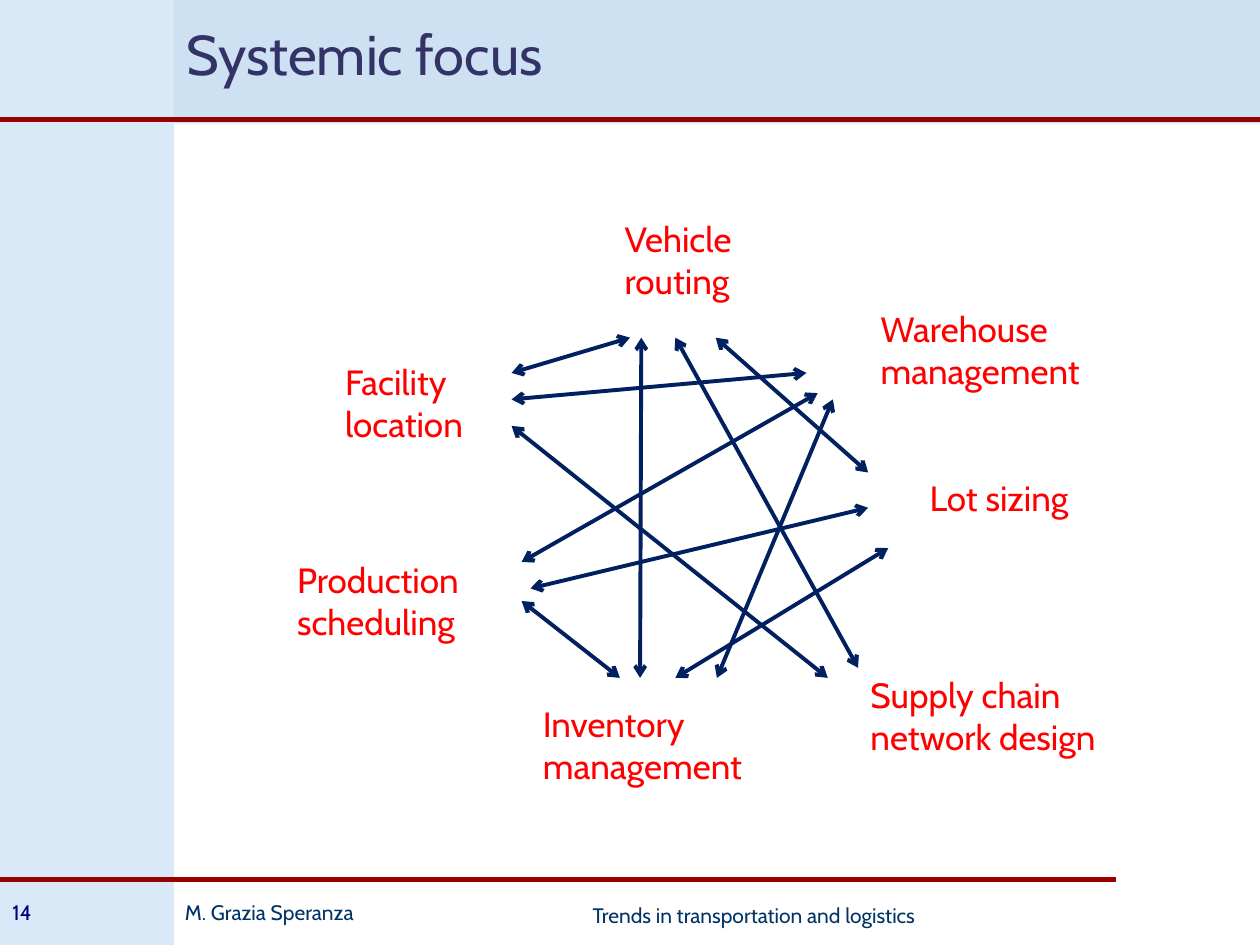
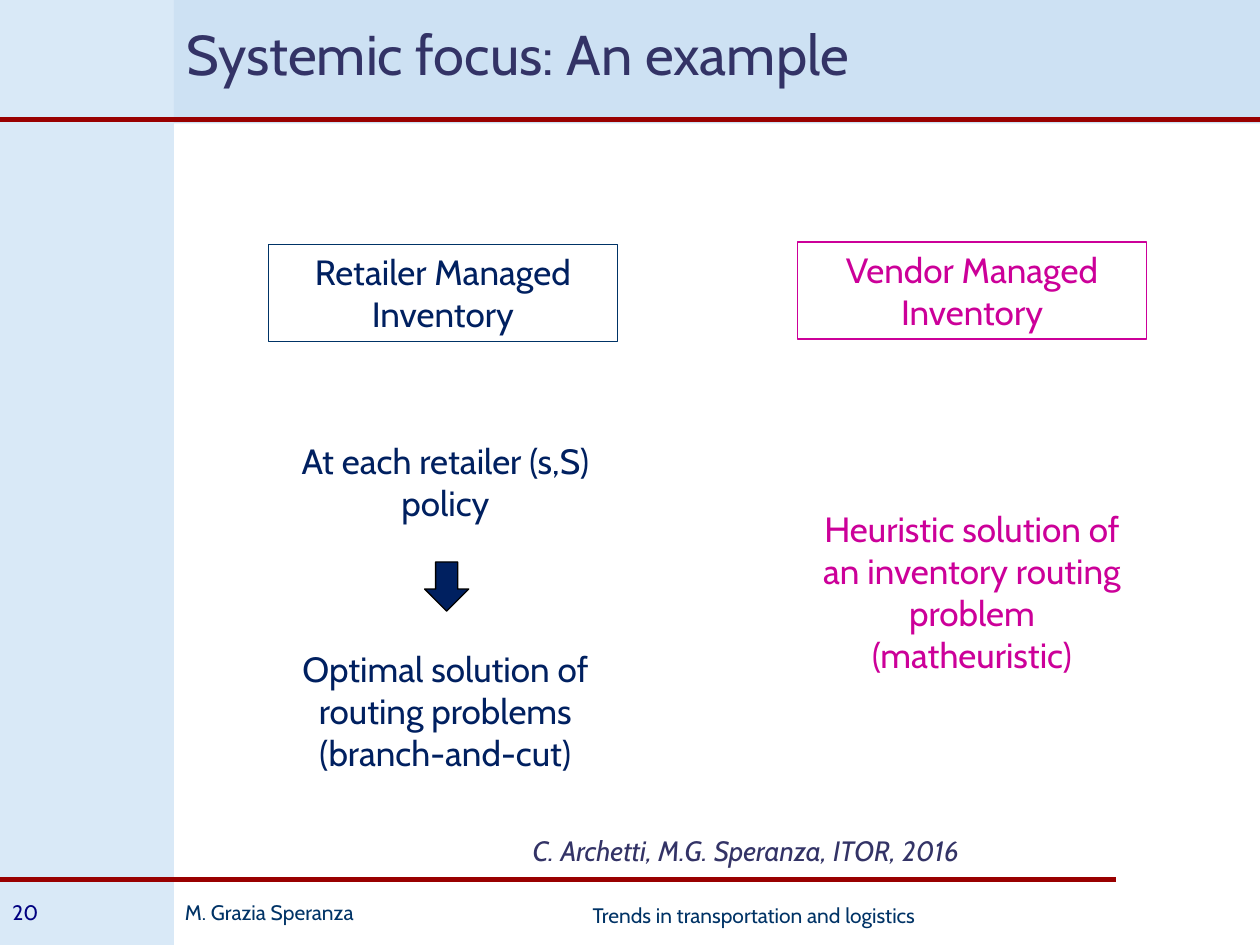
from lxml import etree
from pptx import Presentation
from pptx.dml.color import RGBColor
from pptx.enum.shapes import MSO_CONNECTOR, MSO_SHAPE
from pptx.enum.text import MSO_ANCHOR, MSO_AUTO_SIZE, PP_ALIGN
from pptx.oxml.ns import qn
from pptx.util import Inches, Pt

STRAIGHT = MSO_CONNECTOR.STRAIGHT
RECTANGLE = MSO_SHAPE.RECTANGLE
ROUNDED = MSO_SHAPE.ROUNDED_RECTANGLE
DOWN_ARROW = MSO_SHAPE.DOWN_ARROW
LEFT, CENTER = PP_ALIGN.LEFT, PP_ALIGN.CENTER
TOP, MIDDLE = MSO_ANCHOR.TOP, MSO_ANCHOR.MIDDLE
NO_AUTOFIT = MSO_AUTO_SIZE.NONE

FONT = "Cabin"
TITLE_ONLY = 5
COLORS = {
    "side": "D9E9F7",
    "header": "CDE1F3",
    "rule": "990000",
    "footer": "003366",
    "number": "000080",
    "title": "333366",
    "topic": "FF0000",
    "navy": "002060",
    "magenta": "CC0099",
    "black": "000000",
}

TOPICS = [
    ("Facility location", 2.64, 2.81, 1.64),
    ("Warehouse management", 6.89, 2.39, 2.13),
    ("Production scheduling", 2.26, 4.38, 1.64),
    ("Supply chain network design", 6.81, 5.3, 2.28),
    ("Vehicle routing", 4.86, 1.68, 1.64),
    ("Inventory management", 4.21, 5.53, 2.3),
    ("Lot sizing", 7.28, 3.73, 2.13),
]
LINKS = [
    ((5.09, 2.68), (5.08, 5.38)),
    ((6.4, 2.96), (4.06, 3.17)),
    ((5.68, 2.68), (6.89, 3.75)),
    ((6.89, 4.03), (4.21, 4.67)),
    ((4.14, 4.77), (4.92, 5.38)),
    ((6.57, 5.38), (4.06, 3.38)),
    ((6.61, 3.17), (5.69, 5.38)),
    ((6.49, 3.12), (4.14, 4.46)),
    ((5.36, 5.38), (7.05, 4.35)),
    ((5.36, 2.68), (6.81, 5.3)),
    ((5, 2.68), (4.06, 2.96)),
]


def color(name):
    return RGBColor.from_string(COLORS[name])


class Painter:
    def __init__(self, deck):
        self.deck = deck
        self.page = None

    def start_page(self, title, number):
        layout = self.deck.slide_layouts[TITLE_ONLY]
        self.page = self.deck.slides.add_slide(layout)
        self.shape(ROUNDED, (0, 0, 1.38, 7.5), fill="side").adjustments[0] = 0
        self.shape(RECTANGLE, (1.38, 0, 8.62, 0.98), fill="header")
        self.line((0, 6.98), (8.86, 6.98), "rule", 3)
        self.line((0, 0.95), (10, 0.95), "rule", 3)
        self.text("M. Grazia Speranza", (1.37, 7.09, 1.64, 0.31), 12,
                  "footer", wrap=False)
        self.text("Trends in transportation and logistics",
                  (3.27, 7.11, 5.43, 0.39), 12, "footer", CENTER)
        self.text(number, (0, 7.09, 1.18, 0.32), 12, "number")
        self.title(title)

    def title(self, words):
        box = self.page.shapes.title
        box.left, box.top = Inches(1.38), Inches(-0.14)
        box.width, box.height = Inches(8.62), Inches(1.12)
        self.fill_text(box, words, 32, "title", anchor=MIDDLE)
        box.element.getparent().append(box.element)

    def fill_text(self, box, words, size, ink, align=LEFT, anchor=TOP,
                  wrap=True, italic=False):
        frame = box.text_frame
        frame.text = words
        frame.word_wrap = wrap
        frame.auto_size = NO_AUTOFIT
        frame.vertical_anchor = anchor
        for para in frame.paragraphs:
            para.alignment = align
            for span in para.runs:
                span.font.name = FONT
                span.font.size = Pt(size)
                span.font.italic = italic
                span.font.color.rgb = color(ink)

    def text(self, words, area, size, ink, align=LEFT, **style):
        box = self.page.shapes.add_textbox(*map(Inches, area))
        self.fill_text(box, words, size, ink, align, **style)

    def shape(self, kind, area, fill=None, outline=None):
        shape = self.page.shapes.add_shape(kind, *map(Inches, area))
        shape.shadow.inherit = False
        if fill:
            shape.fill.solid()
            shape.fill.fore_color.rgb = color(fill)
        else:
            shape.fill.background()
        if outline:
            shape.line.color.rgb = color(outline)
            shape.line.width = Pt(0.75)
        else:
            shape.line.fill.background()
        return shape

    def framed_text(self, words, area, ink, outline):
        box = self.shape(RECTANGLE, area, outline=outline)
        self.fill_text(box, words, 20, ink, CENTER)

    def line(self, start, end, ink, width, arrows=False):
        line = self.page.shapes.add_connector(
            STRAIGHT, *map(Inches, start + end))
        line.line.color.rgb = color(ink)
        line.line.width = Pt(width)
        properties = line.element.spPr
        if arrows:
            outline = properties.find(qn("a:ln"))
            for tag in ("a:headEnd", "a:tailEnd"):
                etree.SubElement(outline, qn(tag), type="arrow")
        etree.SubElement(properties, qn("a:effectLst"))


def draw_focus(painter):
    painter.start_page("Systemic focus", "14")
    for words, left, top, width in TOPICS:
        painter.text(words, (left, top, width, 0.57), 20, "topic")
    for start, end in LINKS:
        painter.line(start, end, "navy", 2.25, arrows=True)


def draw_example(painter):
    painter.start_page("Systemic focus: An example", "20")
    painter.text("C. Archetti, M.G. Speranza, ITOR, 2016",
                 (4.13, 6.57, 5.04, 0.4), 16, "title", italic=True)
    painter.framed_text("Retailer Managed Inventory",
                        (2.13, 1.94, 2.77, 0.77), "navy", "footer")
    painter.framed_text("Vendor Managed Inventory",
                        (6.33, 1.92, 2.77, 0.77), "magenta", "magenta")
    painter.text("At each retailer (s,S) policy",
                 (2.15, 3.44, 2.77, 0.77), 20, "navy", CENTER)
    painter.shape(DOWN_ARROW, (3.37, 4.46, 0.35, 0.39), "navy", "black")
    painter.text("Optimal solution of routing problems\n(branch-and-cut)",
                 (2.15, 5.09, 2.77, 1.11), 20, "navy", CENTER)
    painter.text("Heuristic solution of an inventory routing problem\n"
                 "(matheuristic)",
                 (6.33, 3.98, 2.77, 1.45), 20, "magenta", CENTER)


def main():
    deck = Presentation()
    deck.slide_width, deck.slide_height = Inches(10), Inches(7.5)
    painter = Painter(deck)
    draw_focus(painter)
    draw_example(painter)
    deck.save("out.pptx")


if __name__ == "__main__":
    main()
